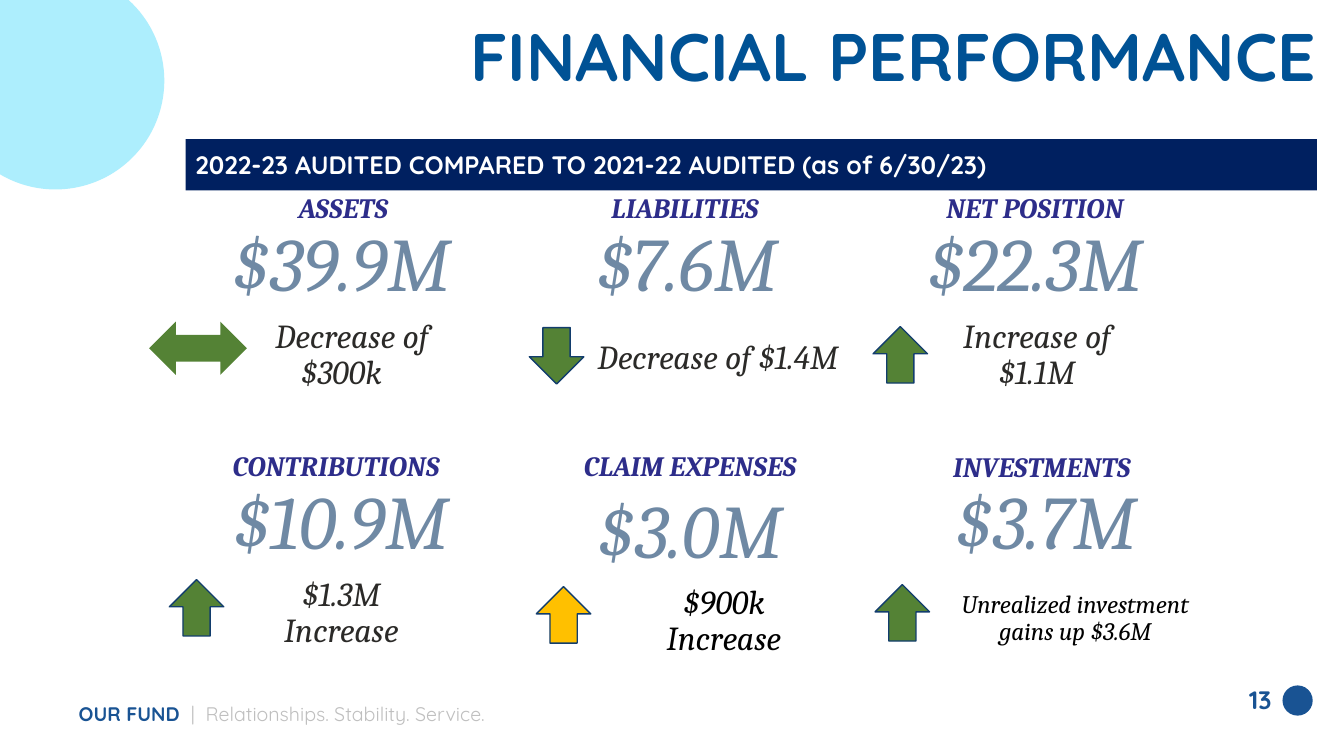
"""Build the financial performance slide with six headline measures."""
from pptx import Presentation
from pptx.dml.color import RGBColor
from pptx.enum import shapes, text
from pptx.util import Inches, Pt

NAVY = RGBColor(0x00, 0x20, 0x60)
TITLE_BLUE = RGBColor(0x00, 0x52, 0x95)
BRAND_BLUE = RGBColor(0x19, 0x53, 0x93)
SKY = RGBColor(0xAD, 0xEE, 0xFD)
WHITE = RGBColor(0xFF, 0xFF, 0xFF)
GRAY = RGBColor(0xBF, 0xBF, 0xBF)
LABEL_INDIGO = RGBColor(0x2D, 0x2D, 0x8A)
AMOUNT_SLATE = RGBColor(0x6F, 0x89, 0xA4)
INK = RGBColor(0x2B, 0x2A, 0x28)
BLACK = RGBColor(0x00, 0x00, 0x00)
GREEN = RGBColor(0x54, 0x82, 0x35)
AMBER = RGBColor(0xFF, 0xC0, 0x00)
ARROW_EDGE = RGBColor(0x12, 0x3D, 0x6D)

LEFT, CENTER, RIGHT = text.PP_ALIGN.LEFT, text.PP_ALIGN.CENTER, text.PP_ALIGN.RIGHT
TOP, MIDDLE, BOTTOM = text.MSO_ANCHOR.TOP, text.MSO_ANCHOR.MIDDLE, text.MSO_ANCHOR.BOTTOM
SHAPE = shapes.MSO_SHAPE
UP, DOWN, SIDEWAYS = SHAPE.UP_ARROW, SHAPE.DOWN_ARROW, SHAPE.LEFT_RIGHT_ARROW

prs = Presentation()
prs.slide_width, prs.slide_height = Inches(13.33), Inches(7.5)
slide = prs.slides.add_slide(prs.slide_layouts[6])


def add_shape(kind, box, fill, edge=None):
    shape = slide.shapes.add_shape(kind, *map(Inches, box))
    shape.shadow.inherit = False
    shape.fill.solid()
    shape.fill.fore_color.rgb = fill
    if edge is None:
        shape.line.fill.background()
    else:
        shape.line.color.rgb = edge
        shape.line.width = Pt(1)
    return shape


def write(holder, words, size, color, font="Cambria", bold=False, italic=False,
          align=CENTER, anchor=TOP, spacing=0.9, inset=(0, 0)):
    frame = holder.text_frame
    frame.word_wrap = True
    frame.vertical_anchor = anchor
    frame.margin_left = frame.margin_right = Inches(inset[0])
    frame.margin_top = frame.margin_bottom = Inches(inset[1])
    frame.text = words
    for paragraph in frame.paragraphs:
        paragraph.alignment = align
        paragraph.line_spacing = spacing
        for run in paragraph.runs:
            run.font.name, run.font.size = font, Pt(size)
            run.font.bold, run.font.italic = bold, italic
            run.font.color.rgb = color
    return frame


add_shape(SHAPE.OVAL, (-0.53, -0.28, 2.16, 2.16), SKY)
add_shape(SHAPE.OVAL, (12.72, 6.8, 0.3, 0.3), BRAND_BLUE)

footer = add_shape(SHAPE.RECTANGLE, (0.73, 6.98, 5.59, 0.26), WHITE)
footer_frame = write(footer, "OUR FUND  ", 14, BRAND_BLUE, "Quicksand", bold=True,
                     align=LEFT, anchor=BOTTOM, spacing=0.68, inset=(0.05, 0.05))
motto = footer_frame.paragraphs[0].add_run()
motto.text = "|  Relationships. Stability. Service."
motto.font.name, motto.font.size, motto.font.bold = "Quicksand", Pt(14), False
motto.font.color.rgb = GRAY

title = slide.shapes.add_textbox(*map(Inches, (4.26, 0.18, 8.89, 0.72)))
write(title, "FINANCIAL PERFORMANCE", 48, TITLE_BLUE, "Quicksand", bold=True,
      align=RIGHT, inset=(0.1, 0.05))

page_number = slide.shapes.add_textbox(*map(Inches, (9.71, 6.83, 3, 0.31)))
write(page_number, "13", 18, BRAND_BLUE, "Quicksand", bold=True,
      align=RIGHT, anchor=BOTTOM, spacing=1.0, inset=(0.1, 0.05))

banner = add_shape(SHAPE.RECTANGLE, (1.84, 1.38, 11.22, 0.51), NAVY)
write(banner, "2022-23 AUDITED COMPARED TO 2021-22 AUDITED (as of 6/30/23)", 18, WHITE,
      "Quicksand", bold=True, align=LEFT, anchor=MIDDLE, spacing=1.0, inset=(0.1, 0.05))

measures = [
    ("ASSETS", (1.7, 1.93), "$39.9M", (1.68, 2.35),
     "Decrease of\n$300k", (1.68, 3.17, 3.41, 0.72), MIDDLE, 24, INK),
    ("LIABILITIES", (5.09, 1.93), "$7.6M", (5.11, 2.35),
     "Decrease of $1.4M", (5.82, 3.24, 2.6, 0.64), MIDDLE, 24, INK),
    ("NET POSITION", (8.56, 1.93), "$22.3M", (8.56, 2.35),
     "Increase of\n$1.1M", (8.58, 3.17, 3.41, 0.72), MIDDLE, 24, INK),
    ("CONTRIBUTIONS", (1.63, 4.49), "$10.9M", (1.68, 4.91),
     "$1.3M\nIncrease", (1.68, 5.73, 3.41, 0.72), TOP, 24, INK),
    ("CLAIM EXPENSES", (5.14, 4.49), "$3.0M", (5.14, 5),
     "$900k\nIncrease", (5.81, 5.81, 2.74, 0.75), TOP, 24, BLACK),
    ("INVESTMENTS", (8.63, 4.5), "$3.7M", (8.67, 4.91),
     "Unrealized investment gains up $3.6M", (9.36, 5.87, 2.61, 0.75), TOP, 18, BLACK),
]
change_frames = {}
for (label, label_at, amount, amount_at,
     change, change_box, change_anchor, change_size, change_color) in measures:
    amount_box = slide.shapes.add_textbox(*map(Inches, (*amount_at, 3.41, 0.59)))
    write(amount_box, amount, 54, AMOUNT_SLATE, italic=True, anchor=MIDDLE, inset=(0.1, 0.05))
    change_text = slide.shapes.add_textbox(*map(Inches, change_box))
    change_frames[label] = write(change_text, change, change_size, change_color,
                                 italic=True, anchor=change_anchor)
    label_box = slide.shapes.add_textbox(*map(Inches, (*label_at, 3.41, 0.72)))
    write(label_box, label, 20, LABEL_INDIGO, bold=True, italic=True)

first_line = change_frames["ASSETS"].paragraphs[0]
first_line._p.get_or_add_pPr().set("marL", str(Inches(0.21)))

trends = [
    (SIDEWAYS, (1.48, 3.19, 0.97, 0.53), GREEN, None),
    (DOWN, (5.25, 3.25, 0.54, 0.56), GREEN, ARROW_EDGE),
    (UP, (8.66, 3.24, 0.54, 0.56), GREEN, ARROW_EDGE),
    (UP, (1.68, 5.75, 0.54, 0.56), GREEN, ARROW_EDGE),
    (UP, (5.32, 5.82, 0.54, 0.56), AMBER, ARROW_EDGE),
    (UP, (8.68, 5.8, 0.54, 0.56), GREEN, ARROW_EDGE),
]
for trend in trends:
    add_shape(*trend)

prs.save("out.pptx")
